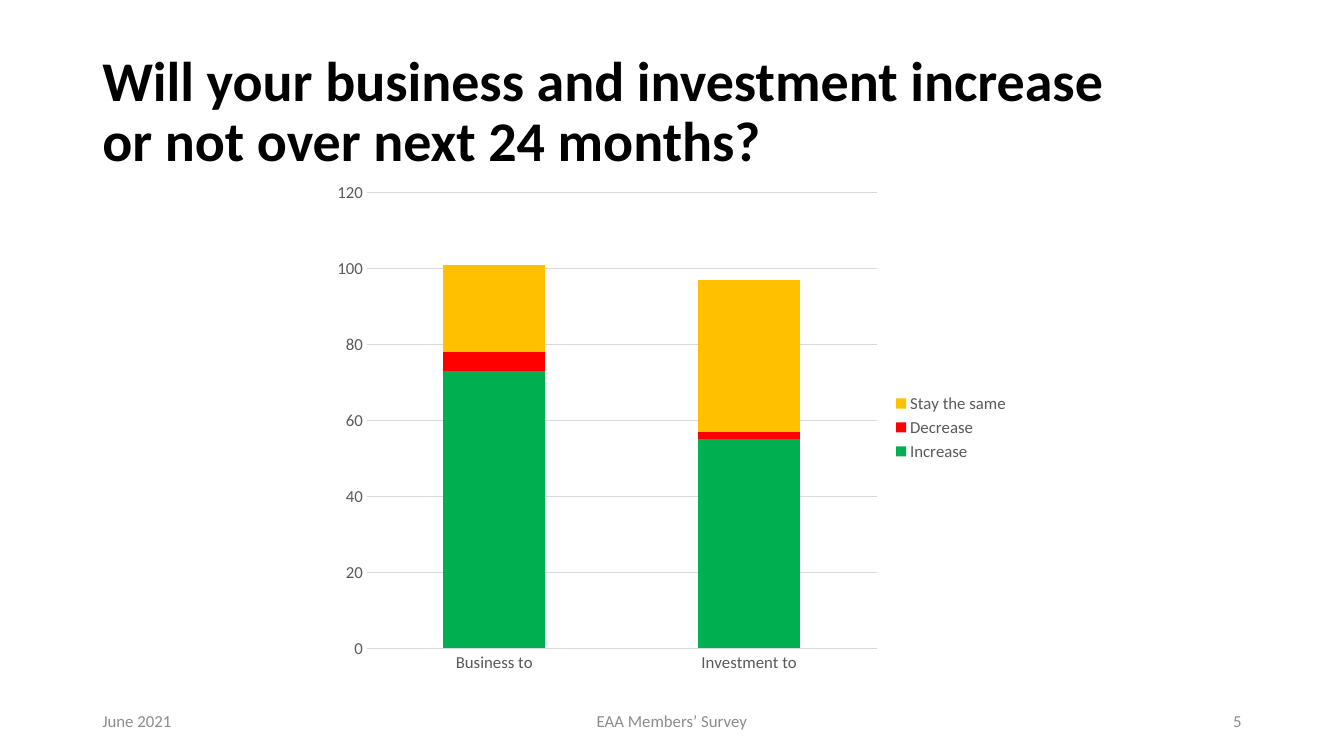
from pptx import Presentation
from pptx.chart.data import CategoryChartData
from pptx.dml.color import RGBColor
from pptx.enum.chart import XL_CHART_TYPE, XL_LEGEND_POSITION, XL_TICK_MARK
from pptx.enum.text import MSO_ANCHOR, PP_ALIGN
from pptx.util import Pt

STACKED = XL_CHART_TYPE.COLUMN_STACKED
LEGEND_RIGHT = XL_LEGEND_POSITION.RIGHT
NO_TICK = XL_TICK_MARK.NONE
MIDDLE = MSO_ANCHOR.MIDDLE
LEFT, CENTER, RIGHT = PP_ALIGN.LEFT, PP_ALIGN.CENTER, PP_ALIGN.RIGHT

FONT = "Calibri"
BLACK, LABEL_GREY, FOOTER_GREY, GRID_GREY = "000000", "595959", "8C8C8C", "D9D9D9"

TITLE = "Will your business and investment increase or not over next 24 months?"
DIRECTIONS = ["Business to", "Investment to"]
ANSWERS = [
    ("Increase", (73, 55), "00B050"),
    ("Decrease", (5, 2), "FF0000"),
    ("Stay the same", (23, 40), "FFC000"),
]
FOOTER = [("June 2021", 216, LEFT), ("EAA Members’ Survey", 324, CENTER), ("5", 216, RIGHT)]

SLIDE_W, SLIDE_H = 960, 540
MARGIN = 66
FOOTER_TOP, FOOTER_H = 500.5, 28.75
TITLE_BOX = (MARGIN, 28.75, 766, 104.4)
CHART_BOX = (231, 123.2, 497.5, 364.3)


def rgb(hex_color):
    return RGBColor.from_string(hex_color)


def set_font(font, size, color, bold=False):
    font.name, font.size, font.bold = FONT, Pt(size), bold
    font.color.rgb = rgb(color)


def add_text(slide, box, text, size, color, align=LEFT, bold=False, spacing=1.0):
    frame = slide.shapes.add_textbox(*map(Pt, box)).text_frame
    frame.word_wrap = True
    frame.vertical_anchor = MIDDLE
    paragraph = frame.paragraphs[0]
    paragraph.alignment = align
    paragraph.line_spacing = spacing
    run = paragraph.add_run()
    run.text = text
    set_font(run.font, size, color, bold)


def add_answer_chart(slide):
    data = CategoryChartData()
    data.categories = DIRECTIONS
    for answer, shares, _ in ANSWERS:
        data.add_series(answer, shares)
    chart = slide.shapes.add_chart(STACKED, *map(Pt, CHART_BOX), data).chart
    chart.has_title = False
    set_font(chart.font, 10, BLACK)

    columns = chart.plots[0]
    columns.gap_width, columns.overlap = 150, 100
    columns.vary_by_categories = False
    for series, (_, _, color) in zip(columns.series, ANSWERS):
        series.format.fill.solid()
        series.format.fill.fore_color.rgb = rgb(color)

    for axis in (chart.category_axis, chart.value_axis):
        axis.major_tick_mark = axis.minor_tick_mark = NO_TICK
        axis.format.line.fill.background()
        set_font(axis.tick_labels.font, 12, LABEL_GREY)
    shares_axis = chart.value_axis
    shares_axis.minimum_scale, shares_axis.maximum_scale = 0, 120
    shares_axis.major_unit = 20
    shares_axis.has_major_gridlines = True
    gridline = shares_axis.major_gridlines.format.line
    gridline.color.rgb = rgb(GRID_GREY)
    gridline.width = Pt(0.75)

    chart.has_legend = True
    chart.legend.position = LEGEND_RIGHT
    chart.legend.include_in_layout = False
    set_font(chart.legend.font, 12, LABEL_GREY)


def main():
    deck = Presentation()
    deck.slide_width, deck.slide_height = Pt(SLIDE_W), Pt(SLIDE_H)
    slide = deck.slides.add_slide(deck.slide_layouts[6])

    add_text(slide, TITLE_BOX, TITLE, 40, BLACK, bold=True, spacing=0.9)
    add_answer_chart(slide)

    footer_width = sum(width for _, width, _ in FOOTER)
    gap = (SLIDE_W - 2 * MARGIN - footer_width) / (len(FOOTER) - 1)
    left = MARGIN
    for text, width, align in FOOTER:
        add_text(slide, (left, FOOTER_TOP, width, FOOTER_H), text, 12, FOOTER_GREY, align)
        left += width + gap

    deck.save("out.pptx")


if __name__ == "__main__":
    main()
